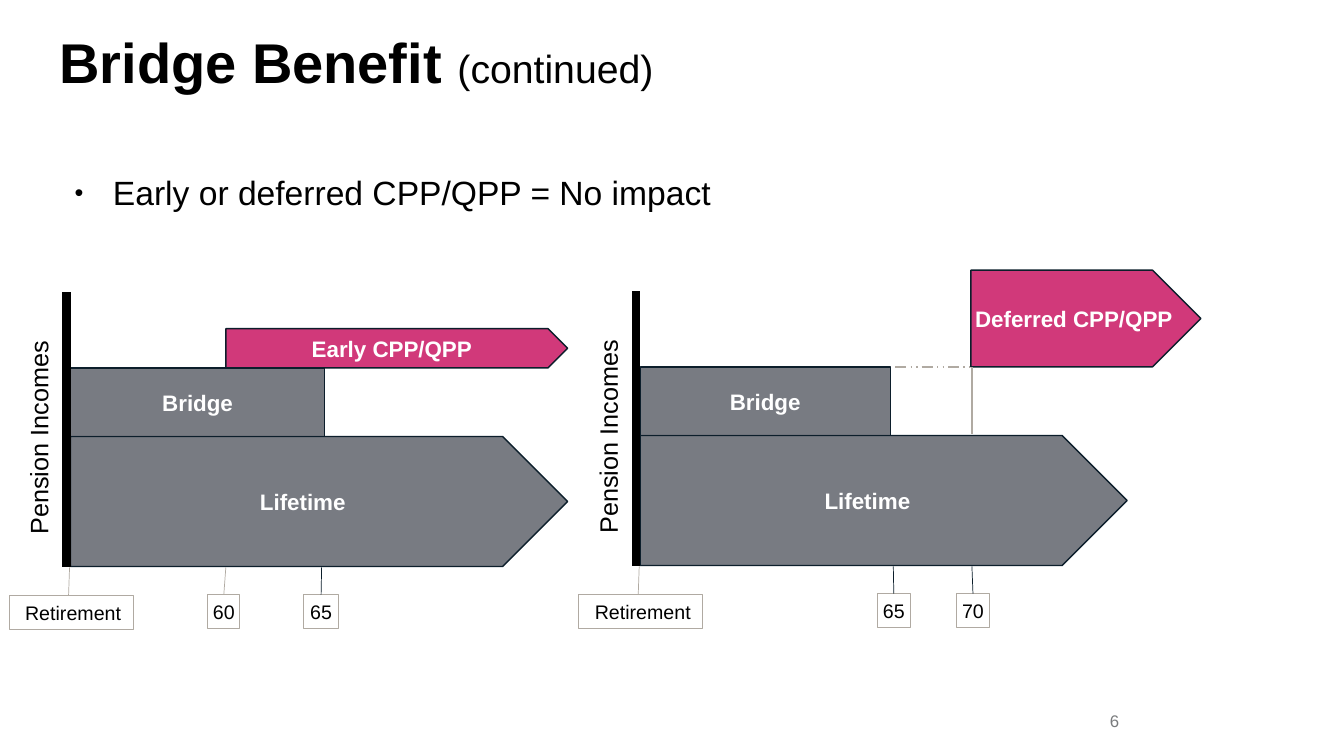
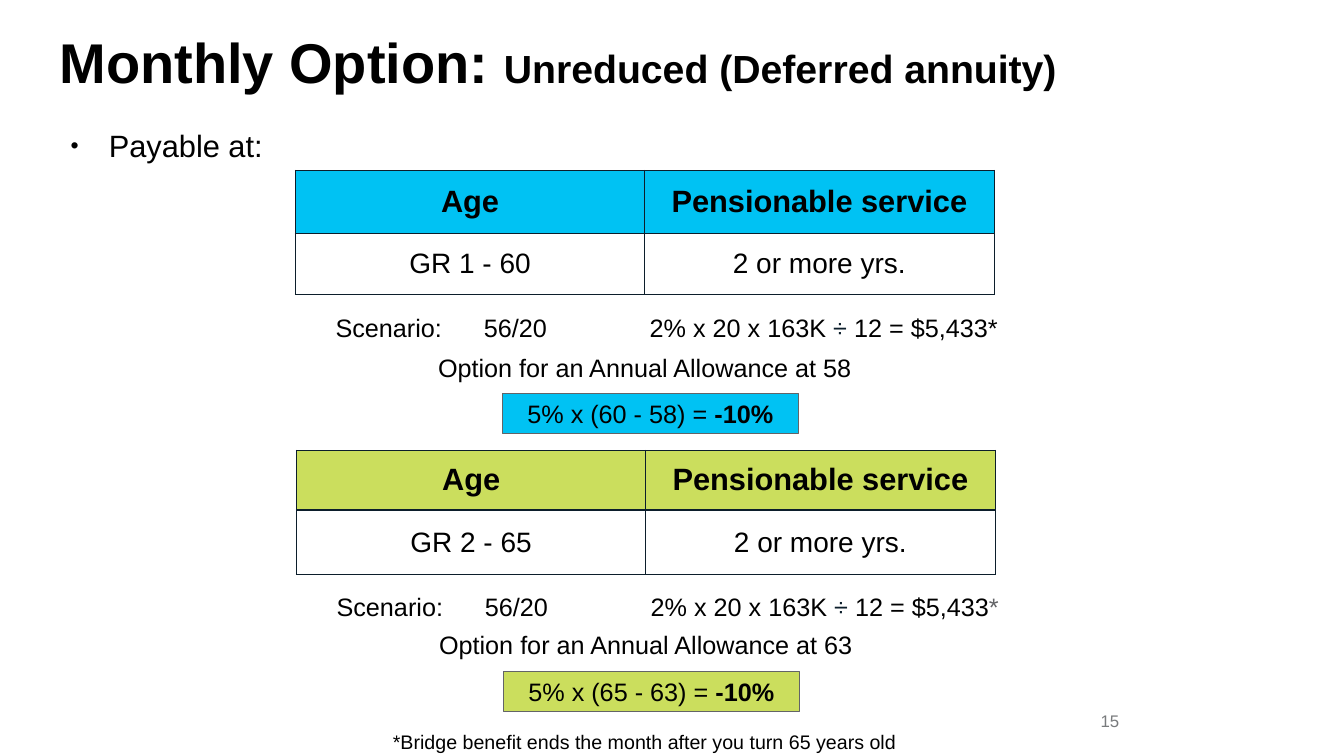
from dataclasses import dataclass

from lxml import etree
from pptx import Presentation
from pptx.dml.color import RGBColor
from pptx.enum.dml import MSO_LINE
from pptx.enum.shapes import MSO_CONNECTOR, MSO_SHAPE
from pptx.enum.text import MSO_ANCHOR, MSO_AUTO_SIZE, PP_ALIGN
from pptx.oxml.ns import qn
from pptx.util import Inches, Pt

LEFT, CENTER, RIGHT = PP_ALIGN.LEFT, PP_ALIGN.CENTER, PP_ALIGN.RIGHT
TOP, MIDDLE = MSO_ANCHOR.TOP, MSO_ANCHOR.MIDDLE
NO_FIT = MSO_AUTO_SIZE.NONE
RECTANGLE, PENTAGON = MSO_SHAPE.RECTANGLE, MSO_SHAPE.PENTAGON
STRAIGHT = MSO_CONNECTOR.STRAIGHT
LONG_DASH_DOT_DOT = MSO_LINE.DASH_DOT_DOT
TITLE_AND_CONTENT = 1
TOP_SIDE = 0


@dataclass(frozen=True)
class Theme:
    """Colours, font and type sizes of the deck."""
    font: str = "Arial"
    black: str = "000000"
    white: str = "FFFFFF"
    navy: str = "0C1E2B"
    slate: str = "4B4F59"
    stone: str = "B0AAA2"
    gray: str = "636467"
    number_gray: str = "797B7D"
    pink: str = "D1397A"
    cyan: str = "00C2F3"
    lime: str = "C3D941"
    title: int = 40
    subtitle: int = 28
    bullet: int = 24
    header: int = 22
    cell: int = 20
    body: int = 18
    block: int = 16
    label: int = 14
    number: int = 12


THEME = Theme()


def write_text(frame, runs, size=THEME.body, color=THEME.black, bold=False,
               align=LEFT, anchor=TOP, insets=None, line_spacing=None):
    """Write one paragraph of runs, each a (text, overrides) pair, into a frame."""
    frame.word_wrap = True
    frame.auto_size = NO_FIT
    frame.vertical_anchor = anchor
    if insets:
        (frame.margin_left, frame.margin_top,
         frame.margin_right, frame.margin_bottom) = map(Inches, insets)
    paragraph = frame.paragraphs[0]
    paragraph.alignment = align
    paragraph.space_before = Pt(0)
    if line_spacing:
        paragraph.line_spacing = line_spacing
    for text, changes in [(runs, {})] if isinstance(runs, str) else runs:
        run = paragraph.add_run()
        run.text = text
        style = {"size": size, "color": color, "bold": bold, **changes}
        run.font.name = THEME.font
        run.font.size = Pt(style["size"])
        run.font.bold = style["bold"]
        run.font.color.rgb = RGBColor.from_string(style["color"])
    return paragraph


def place(shape, box):
    """Move a shape to a box of left, top, width and height in inches."""
    shape.left, shape.top, shape.width, shape.height = map(Inches, box)


def paint(fill, properties, color, opacity=100):
    """Apply a solid colour with an opacity in percent, or no fill."""
    if color is None:
        fill.background()
        return
    fill.solid()
    fill.fore_color.rgb = RGBColor.from_string(color)
    if opacity < 100:
        solid = properties.find(qn("a:solidFill"))
        etree.SubElement(solid[0], qn("a:alpha"), val=str(opacity * 1000))


def add_text(slide, box, runs, **text_format):
    """Add a text box."""
    text_box = slide.shapes.add_textbox(*map(Inches, box))
    write_text(text_box.text_frame, runs, **text_format)
    return text_box


def add_block(slide, box, runs, kind=RECTANGLE, fill=None, opacity=100,
              line=THEME.stone, line_width=0.75, **text_format):
    """Add an outlined shape with centred text."""
    shape = slide.shapes.add_shape(kind, *map(Inches, box))
    shape.shadow.inherit = False
    paint(shape.fill, shape._element.spPr, fill, opacity)
    shape.line.color.rgb = RGBColor.from_string(line)
    shape.line.width = Pt(line_width)
    write_text(shape.text_frame, runs, align=CENTER, **text_format)
    return shape


def add_line(slide, start, end, color=THEME.stone, width=0.5, dash=None):
    """Add a straight connector without shadow."""
    line = slide.shapes.add_connector(STRAIGHT, *map(Inches, (*start, *end)))
    line.line.color.rgb = RGBColor.from_string(color)
    line.line.width = Pt(width)
    if dash:
        line.line.dash_style = dash
    etree.SubElement(line._element.spPr, qn("a:effectLst"))
    return line


def add_slide(presentation, title_runs, bullet, bullet_box, bullet_size, number):
    """Add a slide with its title, bullet and slide number."""
    slide = presentation.slides.add_slide(
        presentation.slide_layouts[TITLE_AND_CONTENT])
    title, body = slide.shapes.title, slide.placeholders[1]
    place(title, (0.59, 0.35, 12.01, 0.85))
    write_text(title.text_frame, title_runs, size=THEME.title, bold=True,
               insets=(0, 0, 0, 0), line_spacing=0.9)
    place(body, bullet_box)
    properties = body.text_frame.paragraphs[0]._p.get_or_add_pPr()
    properties.set("marL", str(Inches(0.38)))
    properties.set("indent", str(-Inches(0.38)))
    etree.SubElement(properties, qn("a:buSzPct"), val="75000")
    etree.SubElement(properties, qn("a:buChar"), char="•")
    write_text(body.text_frame, bullet, size=bullet_size)
    add_text(slide, (9.63, 6.95, 1.57, 0.4), number, size=THEME.number,
             color=THEME.number_gray, align=RIGHT, anchor=MIDDLE)
    return slide


def add_pension_chart(slide, left, top, bridge_width, lifetime_width,
                      cpp_text, cpp_box, ages):
    """Draw pension incomes over time, relative to the top of the axis."""
    start, bridge_top, lifetime_top = left + 0.04, top + 0.75, top + 1.43
    bottom, label_top = top + 2.73, top + 3
    block = {"line": THEME.navy, "line_width": 1, "size": THEME.block,
             "color": THEME.white, "bold": True, "anchor": MIDDLE}
    income = {"fill": THEME.slate, "opacity": 75, **block}
    caption = add_text(slide, (left - 1.41, top + 1.17, 2.26, 0.4),
                       "Pension Incomes")
    caption.rotation = 270
    add_block(slide, (start, lifetime_top, lifetime_width, 1.29), "Lifetime",
              PENTAGON, **income)
    add_block(slide, (start, bridge_top, bridge_width, 0.68), "Bridge", **income)
    cpp_left, cpp_top, cpp_width, cpp_height = cpp_box
    add_block(slide, (left + cpp_left, top + cpp_top, cpp_width, cpp_height),
              cpp_text, PENTAGON, fill=THEME.pink, insets=(0, 0.05, 0, 0.05),
              **block)
    add_line(slide, (left, top), (left, bottom), THEME.black, 6)
    add_block(slide, (left - 0.57, label_top + 0.01, 1.23, 0.34), "Retirement",
              size=THEME.label, insets=(0.14, 0.05, 0.1, 0.05))
    add_line(slide, (left + 0.03, bottom), (left + 0.02, label_top + 0.01))
    for age, offset, width, tick, color in ages:
        label = add_block(slide, (left + offset, label_top, width, 0.34), age,
                          size=THEME.label, insets=(0.05,) * 4)
        line = add_line(slide, (left + tick, bottom),
                        (left + offset + width / 2, label_top), color)
        line.end_connect(label, TOP_SIDE)


def add_border(properties):
    """Outline a table cell on all four sides."""
    for position, side in enumerate(("lnL", "lnR", "lnT", "lnB")):
        border = etree.Element(qn(f"a:{side}"), w=str(Pt(1)))
        solid = etree.SubElement(border, qn("a:solidFill"))
        etree.SubElement(solid, qn("a:srgbClr"), val=THEME.navy)
        properties.insert(position, border)


def add_service_table(slide, box, row_heights, age, color, opacity):
    """Add the table of age and pensionable service."""
    table = slide.shapes.add_table(2, 2, *map(Inches, box)).table
    table.first_row = table.horz_banding = False
    rows = (("Age", "Pensionable service"), (age, "2 or more yrs."))
    for row, texts in enumerate(rows):
        table.rows[row].height = Inches(row_heights[row])
        header = row == 0
        for column, text in enumerate(texts):
            cell = table.cell(row, column)
            properties = cell._tc.get_or_add_tcPr()
            paint(cell.fill, properties, color if header else None, opacity)
            add_border(properties)
            cell.vertical_anchor = MIDDLE
            write_text(cell.text_frame, text, bold=header, align=CENTER,
                       anchor=MIDDLE,
                       size=THEME.header if header else THEME.cell)


def add_option(slide, left, top, row_heights, group, age, allowance_age, color,
               opacity, star_color, offsets):
    """Add one group's table, scenario, allowance and reduction."""
    scenario, allowance, reduction = (top + offset for offset in offsets)
    add_service_table(slide, (left, top, 6.93, 1.23), row_heights,
                      f"{group} - {age}", color, opacity)
    example = add_text(slide, (left + 0.3, scenario, 2.5, 0.37),
                       "Scenario:\t56/20", line_spacing=0.9)
    tabs = etree.SubElement(
        example.text_frame.paragraphs[0]._p.get_or_add_pPr(), qn("a:tabLst"))
    etree.SubElement(tabs, qn("a:tab"), pos=str(Inches(1.47)), algn="l")
    add_text(slide, (left + 3.37, scenario, 3.74, 0.37),
             [("2% x 20 x 163K", {}), (" ÷ ", {"color": THEME.navy}),
              ("12 = $5,433", {}), ("*", {"color": star_color})],
             align=CENTER, line_spacing=0.9)
    add_text(slide, (left, allowance, 6.93, 0.37),
             f"Option for an Annual Allowance at {allowance_age}", align=CENTER)
    add_block(slide, (left + 2.05, reduction, 2.94, 0.4),
              [(f"5% x ({age} - {allowance_age}) = ", {}),
               ("-10%", {"bold": True})],
              fill=color, opacity=opacity, line=THEME.gray)


def build_bridge_slide(presentation):
    """Build the comparison of early and deferred public pensions."""
    slide = add_slide(
        presentation,
        [("Bridge Benefit ", {}),
         ("(continued)", {"size": THEME.subtitle, "bold": False})],
        "Early or deferred CPP/QPP = No impact", (0.64, 1.66, 12, 0.81),
        THEME.bullet, "6")
    add_pension_chart(slide, 0.66, 2.9, 2.52, 4.93, "Early CPP/QPP",
                      (1.58, 0.36, 3.39, 0.39),
                      [("60", 1.4, 0.32, 1.58, THEME.stone),
                       ("65", 2.35, 0.35, 2.53, THEME.navy)])
    add_pension_chart(slide, 6.31, 2.89, 2.48, 4.83, "Deferred CPP/QPP",
                      (3.32, -0.21, 2.28, 0.96),
                      [("65", 2.39, 0.33, 2.55, THEME.navy),
                       ("70", 3.18, 0.32, 3.33, THEME.navy)])
    add_line(slide, (8.88, 3.64), (9.65, 3.64), width=1, dash=LONG_DASH_DOT_DOT)
    add_line(slide, (9.64, 3.64), (9.64, 4.31), width=1)


def build_option_slide(presentation):
    """Build the deferred annuity options of both groups."""
    slide = add_slide(
        presentation,
        [("Monthly Option: ", {}),
         ("Unreduced (Deferred annuity)", {"size": THEME.subtitle})],
        "Payable at:", (0.6, 1.21, 2.49, 0.77), THEME.header, "15")
    add_option(slide, 2.93, 1.69, (0.63, 0.6), "GR 1", 60, 58, THEME.cyan, 100,
               THEME.black, (1.39, 1.76, 2.21))
    add_option(slide, 2.94, 4.47, (0.59, 0.64), "GR 2", 65, 63, THEME.lime, 85,
               THEME.gray, (1.38, 1.72, 2.19))
    add_text(slide, (2.93, 7.19, 6.93, 0.31),
             "*Bridge benefit ends the month after you turn 65 years old",
             size=THEME.label, align=CENTER)


def main():
    """Build and save the presentation."""
    presentation = Presentation()
    presentation.slide_width = Inches(13.33)
    presentation.slide_height = Inches(7.5)
    build_bridge_slide(presentation)
    build_option_slide(presentation)
    presentation.save("out.pptx")


if __name__ == "__main__":
    main()
